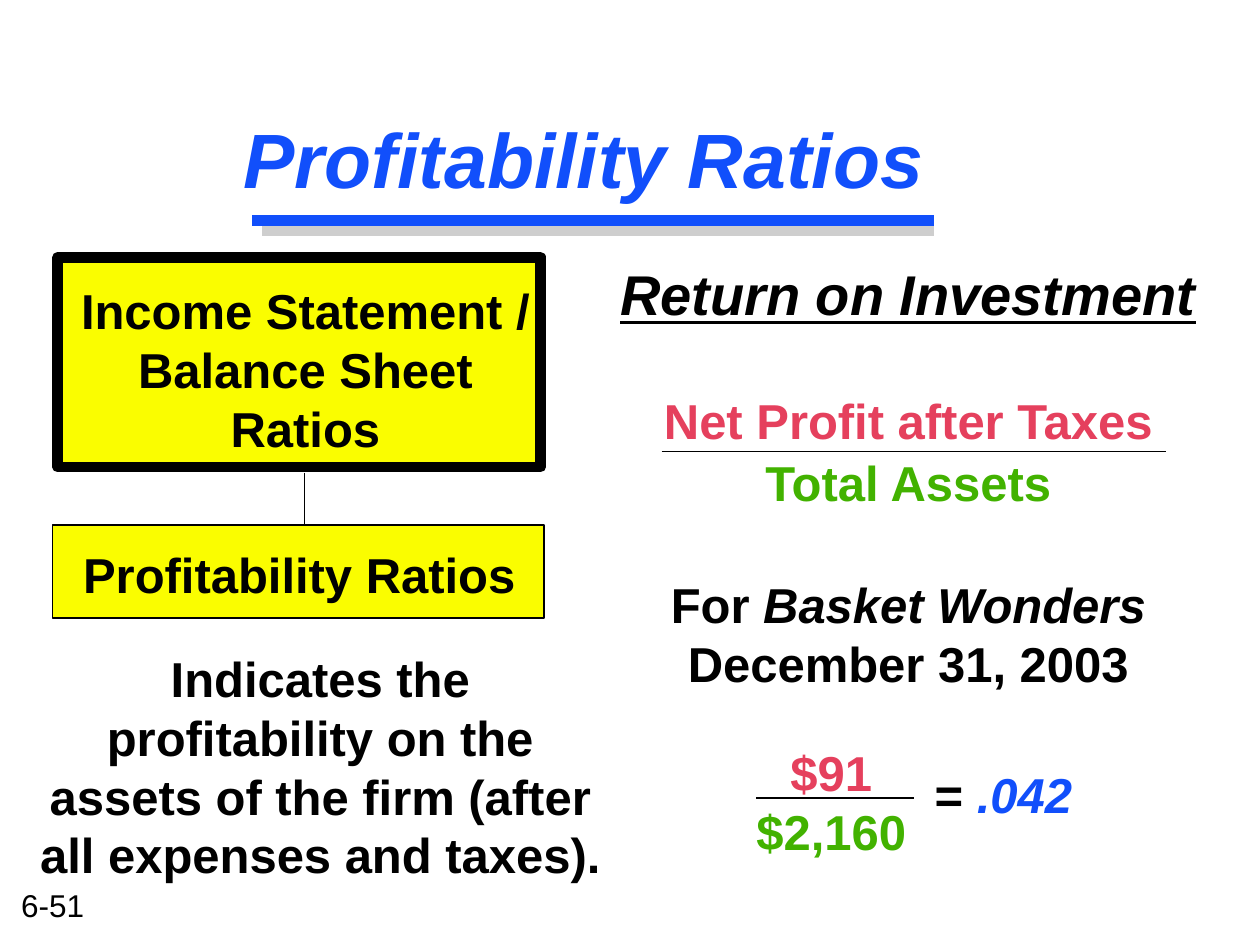
from lxml.etree import SubElement
from pptx import Presentation
from pptx.dml.color import RGBColor
from pptx.enum.shapes import MSO_CONNECTOR, MSO_SHAPE
from pptx.enum.text import MSO_ANCHOR, MSO_AUTO_SIZE, PP_ALIGN
from pptx.oxml import parse_xml
from pptx.oxml.ns import nsdecls, qn
from pptx.util import Pt

BLACK = RGBColor(0x00, 0x00, 0x00)
BLUE = RGBColor(0x11, 0x4F, 0xFB)
RED = RGBColor(0xE5, 0x40, 0x5D)
GREEN = RGBColor(0x42, 0xB2, 0x00)
YELLOW = RGBColor(0xFA, 0xFD, 0x00)
GREY = RGBColor(0xCE, 0xCE, 0xCE)

BASE = dict(name="Arial", size=Pt(28), bold=True)
ITALIC = dict(italic=True)
HEADING = dict(size=Pt(32), italic=True, underline=True)
SMALL = dict(size=Pt(18), bold=False)
TIGHT, GAP = 1.4, 36.4  # space before a paragraph: usual, and after a break

TITLE = ("Profitability Ratios", (132, 42, 582, 96))
TITLE_FORMAT = dict(size=Pt(44), italic=True)

# x1, y1, x2, y2, colour, width
LINES = [
    (150, 132, 534, 132, GREY, 6),
    (144, 126, 534, 126, BLUE, 6),
    (174, 270, 174, 300, BLACK, 1),
    (378, 258, 666, 258, BLACK, 1),
    (432, 456, 522, 456, BLACK, 1),
]

# (left, top, width, height), border width
BOXES = [
    ((33, 147, 276, 120), 6),
    ((30, 300, 281, 53), 1),
]

# (left, top, width, height), wraps, alignment, paragraphs of (space before, runs)
CENTER, LEFT = PP_ALIGN.CENTER, PP_ALIGN.LEFT
TEXTS = [
    ((5, 502.5, 53, 29), False, LEFT, [(0, [("6-51", BLACK, SMALL)])]),
    ((336, 145, 366, 264), True, CENTER, [
        (0, [("Return on Investment", BLACK, HEADING)]),
        (GAP, [("Net Profit after Taxes", RED, {})]),
        (TIGHT, [("Total Assets", GREEN, {})]),
        (GAP, [("For ", BLACK, {}), ("Basket Wonders ", BLACK, ITALIC),
               ("December 31, 2003", BLACK, {})]),
    ]),
    ((12, 367, 342, 138), True, CENTER, [
        (0, [("Indicates the profitability on the assets of the firm "
              "(after all expenses and taxes).", BLACK, {})]),
    ]),
    ((39, 157, 271, 108), False, CENTER, [
        (0, [("Income Statement /", BLACK, {})]),
        (0, [("Balance Sheet", BLACK, {})]),
        (0, [("Ratios", BLACK, {})]),
    ]),
    ((36, 307.5, 270, 40), True, CENTER, [
        (0, [("Profitability Ratios", BLACK, {})]),
    ]),
    ((425, 421, 100, 74), False, CENTER, [
        (0, [("$91", RED, {})]),
        (0, [("$2,160", GREEN, {})]),
    ]),
    ((527, 433.5, 93, 40), False, LEFT, [
        (0, [("= ", BLACK, {}), (".042", BLUE, ITALIC)]),
    ]),
]


def points(values):
    return [Pt(value) for value in values]


def add_run(paragraph, text, colour, changes):
    run = paragraph.add_run()
    run.text = text
    for key, value in {**BASE, **changes}.items():
        setattr(run.font, key, value)
    run.font.color.rgb = colour
    return run


def add_text_shadow(run):
    """Cast a solid grey shadow down and to the right of the letters."""
    effect = parse_xml(
        f'<a:effectLst {nsdecls("a")}><a:outerShdw dist="53882" dir="2700000" '
        f'algn="ctr" rotWithShape="0"><a:srgbClr val="{GREY}"/>'
        '</a:outerShdw></a:effectLst>')
    run.font._element.find(qn("a:solidFill")).addnext(effect)


def add_title(slide):
    text, place = TITLE
    title = slide.shapes.title
    title.left, title.top, title.width, title.height = points(place)
    frame = title.text_frame
    frame.auto_size = MSO_AUTO_SIZE.NONE
    frame.vertical_anchor = MSO_ANCHOR.MIDDLE
    paragraph = frame.paragraphs[0]
    paragraph.alignment = LEFT
    add_text_shadow(add_run(paragraph, text, BLUE, TITLE_FORMAT))


def add_line(slide, x1, y1, x2, y2, colour, width):
    line = slide.shapes.add_connector(
        MSO_CONNECTOR.STRAIGHT, *points((x1, y1, x2, y2)))
    line.line.color.rgb = colour
    line.line.width = Pt(width)
    SubElement(line._element.spPr, qn("a:effectLst"))


def add_box(slide, place, border):
    box = slide.shapes.add_shape(MSO_SHAPE.RECTANGLE, *points(place))
    box.shadow.inherit = False
    box.fill.solid()
    box.fill.fore_color.rgb = YELLOW
    box.line.color.rgb = BLACK
    box.line.width = Pt(border)


def add_text(slide, place, wraps, alignment, paragraphs):
    frame = slide.shapes.add_textbox(*points(place)).text_frame
    frame.word_wrap = wraps
    for index, (space, runs) in enumerate(paragraphs):
        paragraph = frame.add_paragraph() if index else frame.paragraphs[0]
        paragraph.alignment = alignment
        if space:
            paragraph.space_before = Pt(space)
        for run in runs:
            add_run(paragraph, *run)


def main():
    presentation = Presentation()
    presentation.slide_width, presentation.slide_height = Pt(720), Pt(540)
    slide = presentation.slides.add_slide(presentation.slide_layouts[5])
    add_title(slide)
    for line in LINES:
        add_line(slide, *line)
    for box in BOXES:
        add_box(slide, *box)
    for text in TEXTS:
        add_text(slide, *text)
    presentation.save("out.pptx")


if __name__ == "__main__":
    main()
